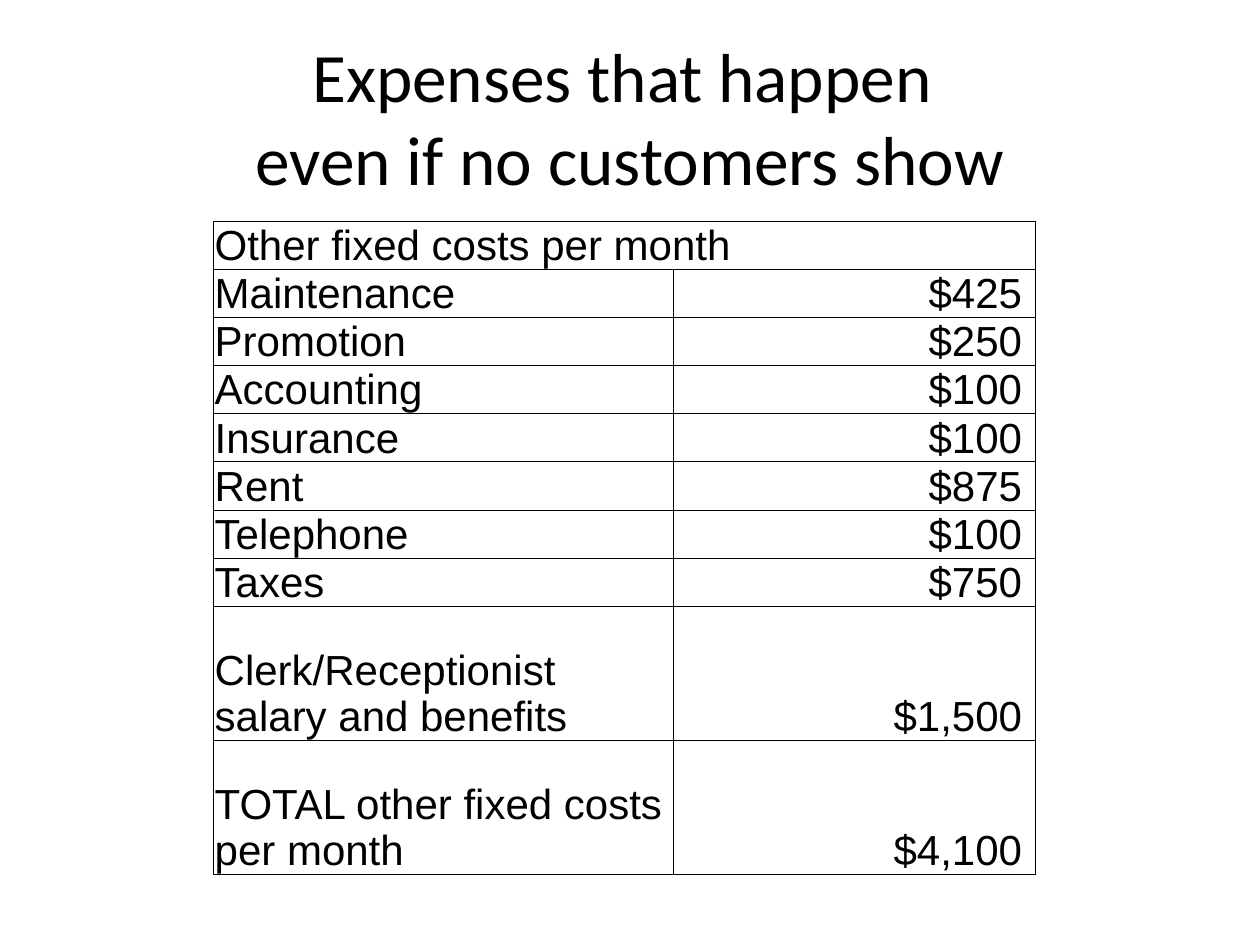
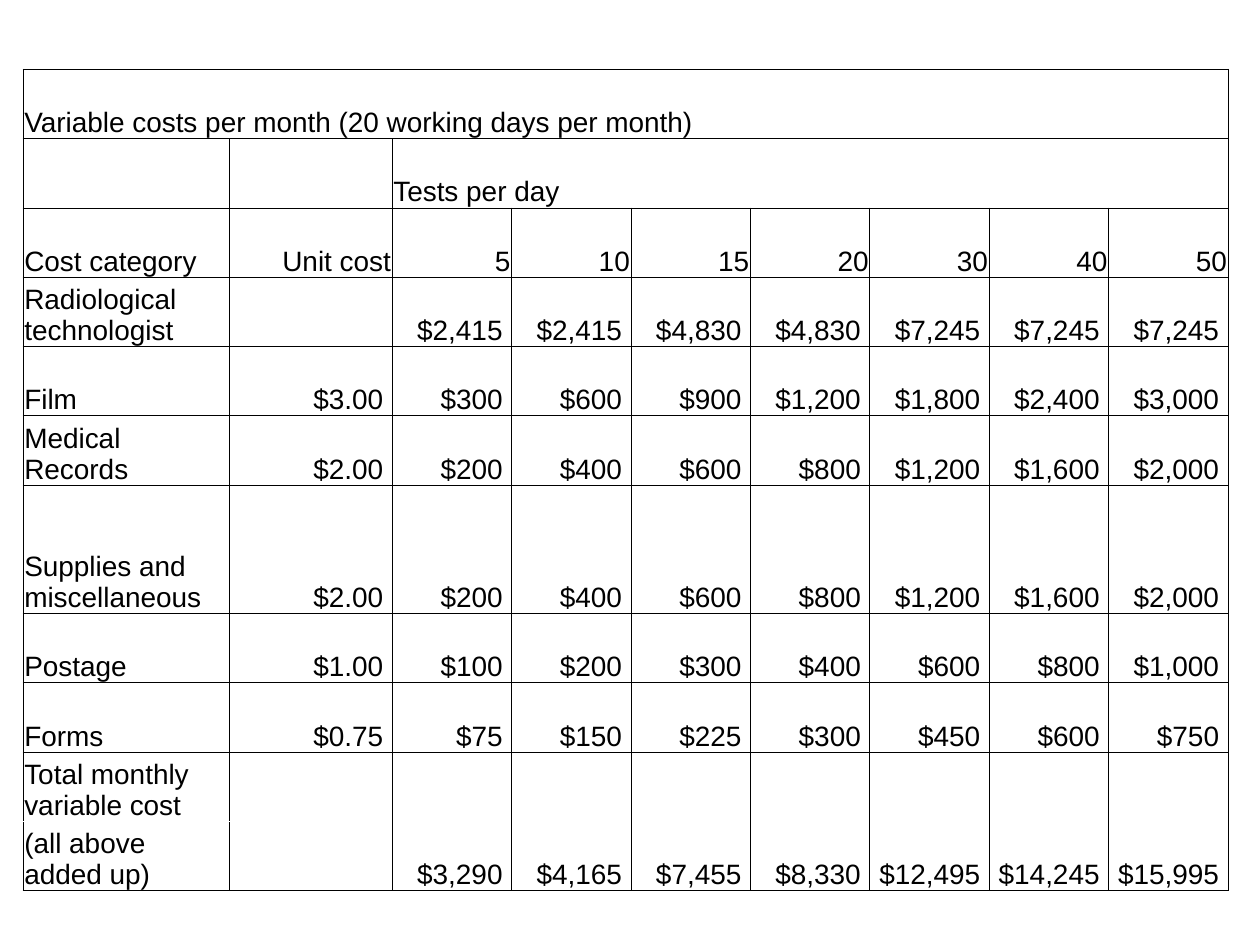
"""Build two slides of fixed and variable monthly costs."""
from dataclasses import dataclass

from lxml import etree
from pptx import Presentation
from pptx.dml.color import RGBColor
from pptx.enum import text
from pptx.oxml import ns
from pptx.util import Pt


@dataclass(frozen=True)
class Theme:
    ink: str = "000000"
    head: str = "Calibri"
    body: str = "Arial"
    title: float = 39.6
    large: float = 24
    small: float = 16
    rule: float = 0.5
    inset: float = 0.7


class Deck:
    def __init__(self, theme):
        self.theme = theme
        self.prs = Presentation()
        self.prs.slide_width, self.prs.slide_height = Pt(720), Pt(540)
        self.slide = None

    def add(self, layout):
        self.slide = self.prs.slides.add_slide(self.prs.slide_layouts[layout])

    def style(self, para, face, size, align):
        para.alignment = align
        para.font.name, para.font.size = face, Pt(size)
        para.font.color.rgb = RGBColor.from_string(self.theme.ink)

    def title(self, words, left, top, width, height):
        box = self.slide.shapes.title
        box.left, box.top, box.width, box.height = map(Pt, (left, top, width, height))
        frame = box.text_frame
        frame.text = words
        frame.auto_size = text.MSO_AUTO_SIZE.NONE
        frame.vertical_anchor = text.MSO_ANCHOR.MIDDLE
        self.style(frame.paragraphs[0], self.theme.head, self.theme.title, text.PP_ALIGN.CENTER)

    def border(self, cell, sides):
        props = cell._tc.get_or_add_tcPr()
        for spot, side in enumerate(sides):
            line = etree.Element(ns.qn(f"a:ln{side}"), w=str(Pt(self.theme.rule)))
            fill = etree.SubElement(line, ns.qn("a:solidFill"))
            etree.SubElement(fill, ns.qn("a:srgbClr"), val=self.theme.ink)
            props.insert(spot, line)

    def cell(self, cell, words, size, right, sides):
        cell.text = words
        cell.fill.background()
        cell.vertical_anchor = text.MSO_ANCHOR.BOTTOM
        cell.margin_left = cell.margin_right = cell.margin_top = Pt(self.theme.inset)
        cell.margin_bottom = 0
        align = text.PP_ALIGN.RIGHT if right else text.PP_ALIGN.LEFT
        self.style(cell.text_frame.paragraphs[0], self.theme.body, size, align)
        self.border(cell, sides)

    def table(self, left, top, cols, highs, rows, size, spans, gaps=None):
        frame = self.slide.shapes.add_table(
            len(highs), len(cols), Pt(left), Pt(top), Pt(sum(cols)), Pt(sum(highs)))
        grid = frame.table
        grid.first_row = grid.horz_banding = False
        for col, width in zip(grid.columns, cols):
            col.width = Pt(width)
        for row, high in zip(grid.rows, highs):
            row.height = Pt(high)
        for r1, c1, r2, c2 in spans:
            grid.cell(r1, c1).merge(grid.cell(r2, c2))
        for r, row in enumerate(rows):
            for c in range(len(cols)):
                cell = grid.cell(r, c)
                words = row[c] if c < len(row) else ""
                right = c > 0 and cell.span_width == 1
                self.cell(cell, words, size, right, (gaps or {}).get((r, c), "LRTB"))


def money(value, places=0):
    return f"${value:,.{places}f} "


def fixed(deck):
    costs = {"Maintenance": 425, "Promotion": 250, "Accounting": 100, "Insurance": 100,
             "Rent": 875, "Telephone": 100, "Taxes": 750,
             "Clerk/Receptionist salary and benefits": 1500}
    costs["TOTAL other fixed costs per month"] = sum(costs.values())
    rows = [["Other fixed costs per month"]]
    rows += [[name, money(cost)] for name, cost in costs.items()]
    deck.add(5)
    deck.title("Expenses that happen \veven if no customers show", 36, 21.6, 648, 90)
    deck.table(122, 126.6, [262.8, 206.6], [26] * 8 + [77, 76.5], rows,
               deck.theme.large, [(0, 0, 0, 1)])


def variable(deck):
    days = 20
    tests = [5, 10, 15, 20, 30, 40, 50]
    staff = [2415, 2415, 4830, 4830, 7245, 7245, 7245]
    units = {"Film": 3, "Medical Records": 2, "Supplies and miscellaneous": 2,
             "Postage": 1, "Forms": 0.75}
    totals = [pay + days * test * sum(units.values()) for pay, test in zip(staff, tests)]
    rows = [[f"Variable costs per month ({days} working days per month)"],
            ["", "", "Tests per day"],
            ["Cost category", "Unit cost", *map(str, tests)],
            ["Radiological technologist", "", *map(money, staff)]]
    rows += [[name, money(unit, 2), *(money(unit * days * test) for test in tests)]
             for name, unit in units.items()]
    rows += [["Total monthly variable cost", "", *map(money, totals)],
             ["(all above added up)"]]
    last = len(rows) - 1
    highs = [39.6] * len(rows)
    highs[6] = 73.4
    spans = [(0, 0, 0, 8), (1, 2, 1, 8)]
    spans += [(last - 1, c, last, c) for c in range(1, 9)]
    deck.add(6)
    deck.table(13.2, 39.6, [118, 92.9] + [68.25] * 7, highs, rows, deck.theme.small,
               spans, {(last - 1, 0): "LRT", (last, 0): "LRB"})


def main():
    deck = Deck(Theme())
    fixed(deck)
    variable(deck)
    deck.prs.save("out.pptx")


if __name__ == "__main__":
    main()
